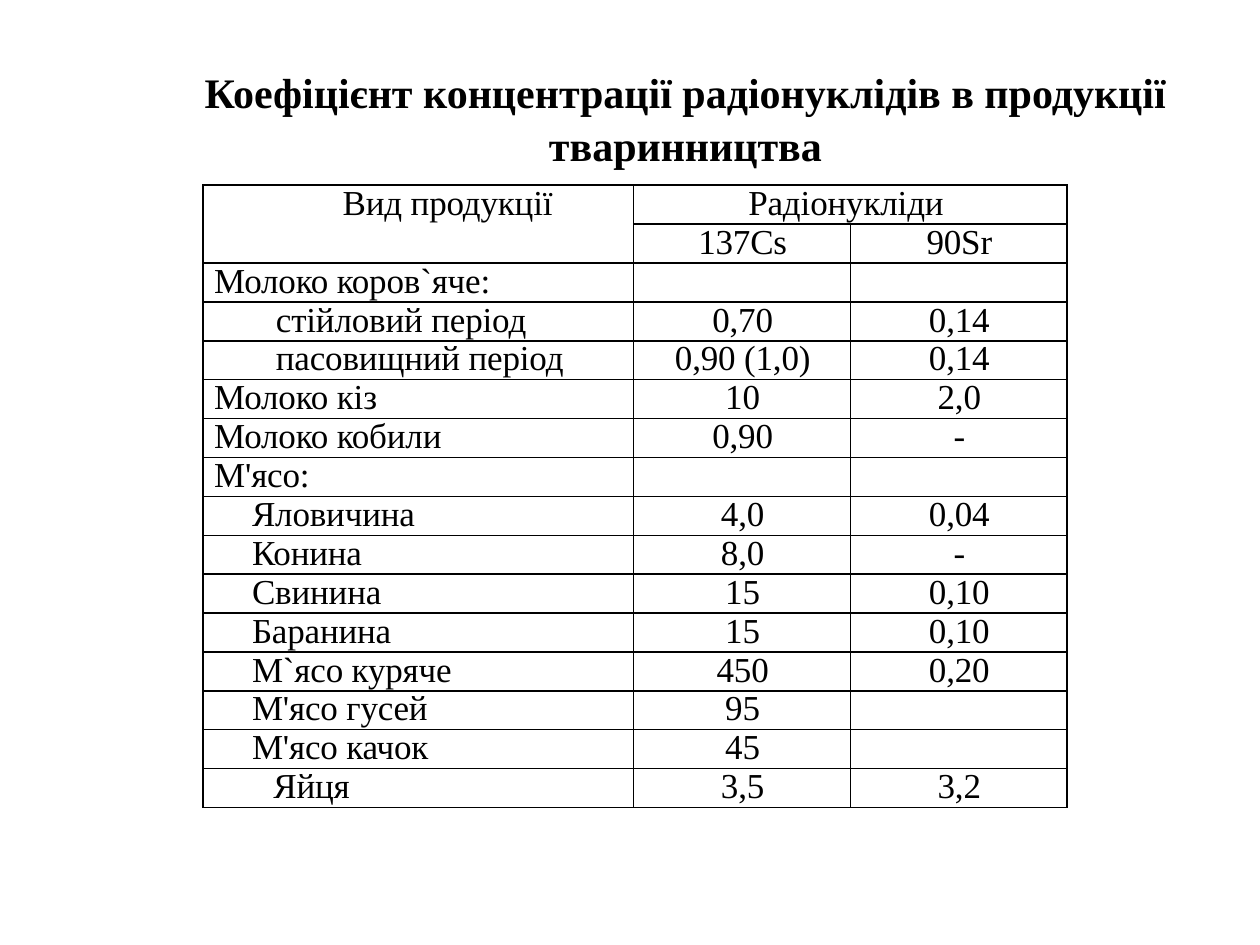
from lxml.etree import SubElement
from pptx import Presentation
from pptx.dml.color import RGBColor
from pptx.enum.text import MSO_ANCHOR, PP_ALIGN
from pptx.oxml.ns import qn
from pptx.util import Inches, Pt

BLACK = RGBColor(0, 0, 0)
WHITE = RGBColor(255, 255, 255)
FONT = "Times New Roman"
COLUMNS = (3.42, 1.72, 1.72)
ROW_HEIGHT = 4.94 / 16

# Left indents of the first column, in inches
GROUP, KIND, EGGS, PERIOD = 0.09, 0.39, 0.56, 0.58

PRODUCTS = [
    (GROUP, "Молоко коров`яче:", "", ""),
    (PERIOD, "стійловий період", "0,70", "0,14"),
    (PERIOD, "пасовищний період", "0,90 (1,0)", "0,14"),
    (GROUP, "Молоко кіз", "10", "2,0"),
    (GROUP, "Молоко кобили", "0,90", "-"),
    (GROUP, "М'ясо:", "", ""),
    (KIND, "Яловичина", "4,0", "0,04"),
    (KIND, "Конина", "8,0", "-"),
    (KIND, "Свинина", "15", "0,10"),
    (KIND, "Баранина", "15", "0,10"),
    (KIND, "М`ясо куряче", "450", "0,20"),
    (KIND, "М'ясо гусей", "95", ""),
    (KIND, "М'ясо качок", "45", ""),
    (EGGS, "Яйця", "3,5", "3,2"),
]


def write(p, text, size, spacing, align=PP_ALIGN.LEFT, bold=False, left=0, first=0):
    p.alignment, p.line_spacing = align, spacing
    pPr = p._p.get_or_add_pPr()
    pPr.set("marL", str(Inches(left)))
    pPr.set("indent", str(Inches(first)))
    r = p.add_run()
    r.text = text
    for name, value in {"name": FONT, "size": Pt(size), "bold": bold}.items():
        setattr(r.font, name, value)
    r.font.color.rgb = BLACK
    return r


def add_title(slide, lines):
    box = slide.shapes.add_textbox(Inches(0.99), Inches(0.47), Inches(8.41), Inches(0.91))
    tf = box.text_frame
    tf.word_wrap = False
    tf.vertical_anchor = MSO_ANCHOR.MIDDLE
    for i, line in enumerate(lines):
        p = tf.add_paragraph() if i else tf.paragraphs[0]
        write(p, line, 24, 1.06, PP_ALIGN.CENTER, bold=True, first=0.49)


def format_cell(cell):
    for side in ("left", "right", "top", "bottom"):
        setattr(cell, f"margin_{side}", 0)
    tcPr = cell._tc.get_or_add_tcPr()
    for edge in ("lnL", "lnR", "lnT", "lnB"):
        ln = SubElement(tcPr, qn(f"a:{edge}"), w=str(Pt(1)))
        fill = SubElement(ln, qn("a:solidFill"))
        SubElement(fill, qn("a:srgbClr"), val=str(BLACK))
    cell.fill.solid()
    cell.fill.fore_color.rgb = WHITE


def fill_cell(cell, text, **layout):
    if text:
        r = write(cell.text_frame.paragraphs[0], text, 20, 0.97, **layout)
        r._r.get_or_add_rPr().set("spc", "-10")


def add_products_table(slide):
    n = len(PRODUCTS) + 2
    table = slide.shapes.add_table(
        n, len(COLUMNS), Inches(1.61), Inches(1.47),
        Inches(sum(COLUMNS)), Inches(n * ROW_HEIGHT)).table
    for column, width in zip(table.columns, COLUMNS):
        column.width = Inches(width)
    for row in table.rows:
        row.height = Inches(ROW_HEIGHT)
        for cell in row.cells:
            format_cell(cell)

    # Two-level header
    table.cell(0, 0).merge(table.cell(1, 0))
    table.cell(0, 1).merge(table.cell(0, 2))
    fill_cell(table.cell(0, 0), "Вид продукції", left=1.11)
    fill_cell(table.cell(0, 1), "Радіонукліди", left=0.91)
    centred = {"align": PP_ALIGN.CENTER, "left": 0.01}
    for col, nuclide in enumerate(("137Cs", "90Sr"), 1):
        fill_cell(table.cell(1, col), nuclide, **centred)

    # Products and their coefficients
    for row, (indent, product, *values) in enumerate(PRODUCTS, 2):
        fill_cell(table.cell(row, 0), product, left=indent)
        for col, value in enumerate(values, 1):
            fill_cell(table.cell(row, col), value, **centred)


def main():
    prs = Presentation()
    prs.slide_width, prs.slide_height = Inches(10), Inches(7.5)
    slide = prs.slides.add_slide(prs.slide_layouts[6])
    add_products_table(slide)
    add_title(slide, ("Коефіцієнт концентрації радіонуклідів в продукції",
                      "тваринництва"))
    prs.save("out.pptx")


if __name__ == "__main__":
    main()
